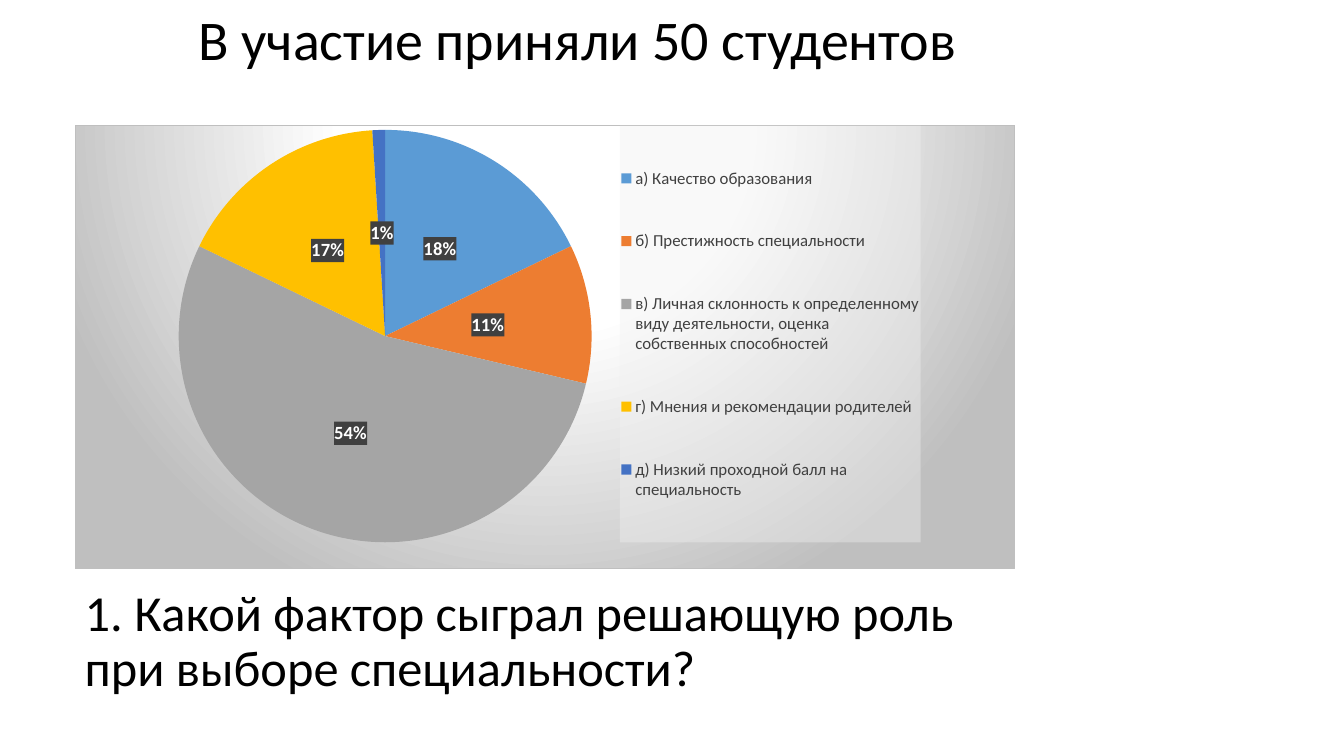
from lxml import etree
from pptx import Presentation
from pptx.chart.data import CategoryChartData
from pptx.dml.color import RGBColor
from pptx.enum.chart import XL_CHART_TYPE, XL_LABEL_POSITION, XL_LEGEND_POSITION
from pptx.enum.text import MSO_ANCHOR, MSO_AUTO_SIZE, PP_ALIGN
from pptx.oxml.ns import nsdecls, qn
from pptx.util import Pt

PIE = XL_CHART_TYPE.PIE
MID = XL_LABEL_POSITION.CENTER
RIGHT = XL_LEGEND_POSITION.RIGHT
GROW = MSO_AUTO_SIZE.SHAPE_TO_FIT_TEXT

FONT = "Calibri"
HEAD = "В участие приняли 50 студентов "
ASK = "1. Какой фактор сыграл решающую роль при выборе специальности?"
FACTORS = [
    ("а) Качество образования", 18, "5B9BD5"),
    ("б) Престижность специальности", 11, "ED7D31"),
    ("в) Личная склонность к определенному виду деятельности, "
     "оценка собственных способностей", 54, "A5A5A5"),
    ("г) Мнения и рекомендации родителей", 17, "FFC000"),
    ("д) Низкий проходной балл на специальность", 1, "4472C4"),
]
LEFT, WIDE = 53.3, 671.8
ASK_BOX = (LEFT, 399.6, WIDE, 118.8)
PIE_BOX = (LEFT, 89.3, WIDE, 317.5)
HEAD_BOX = (39.6, 0, 754.6, 55.4)
STOPS = [(0, "FFFFFF"), (39, "FFFFFF"), (100, "BFBFBF")]


def color(font, tint):
    font.color.rgb = RGBColor.from_string(tint)


def style(font, size, tint, bold=False):
    font.name = FONT
    font.size = Pt(size)
    font.bold = bold
    color(font, tint)


def write(shape, text, size, align):
    frame = shape.text_frame
    frame.text = text
    frame.word_wrap = True
    para = frame.paragraphs[0]
    para.alignment = align
    style(para.runs[0].font, size, "000000")
    return frame, para


def props(inner):
    return etree.fromstring(f"<c:spPr {nsdecls('c', 'a')}>{inner}</c:spPr>")


def wash(tint, alpha):
    return props(f'<a:solidFill><a:srgbClr val="{tint}">'
                 f'<a:alpha val="{alpha * 1000}"/></a:srgbClr></a:solidFill>')


def layout(x, y, w, h, inner=False):
    area = '<c:layoutTarget val="inner"/>' if inner else ""
    modes = "".join(f'<c:{a}Mode val="edge"/>' for a in "xy")
    sizes = "".join(f'<c:{k} val="{v}"/>' for k, v in zip("xywh", (x, y, w, h)))
    return etree.fromstring(f"<c:layout {nsdecls('c')}><c:manualLayout>{area}{modes}"
                            f"{sizes}</c:manualLayout></c:layout>")


def place(parent, spot, node):
    old = parent.find(qn("c:layout"))
    if old is not None:
        parent.remove(old)
    parent.insert(spot, node)


def draw(slide):
    data = CategoryChartData()
    data.categories = [name for name, _, _ in FACTORS]
    data.add_series("Series 1", [share for _, share, _ in FACTORS])
    box = [Pt(n) for n in PIE_BOX]
    chart = slide.shapes.add_chart(PIE, *box, data).chart
    chart.has_title = False
    style(chart.font, 10, "000000")
    chart.has_legend = True
    chart.legend.position = RIGHT
    chart.legend.include_in_layout = False
    style(chart.legend.font, 12, "404040")

    plot = chart.plots[0]
    plot.vary_by_categories = True
    series = plot.series[0]
    for i, (_, _, tint) in enumerate(FACTORS):
        fill = series.points[i].format.fill
        fill.solid()
        fill.fore_color.rgb = RGBColor.from_string(tint)

    labels = series.data_labels
    labels.show_value = True
    labels.show_percentage = False
    labels.number_format = '0"%"'
    labels.number_format_is_linked = False
    labels.position = MID
    style(labels.font, 13.3, "FFFFFF", True)

    root = chart.element
    root.find(".//" + qn("c:dLbls")).find(qn("c:numFmt")).addnext(wash("404040", 90))
    place(root.find(".//" + qn("c:plotArea")), 0, layout(0.11, 0.01, 0.44, 0.93, True))
    key = root.find(".//" + qn("c:legend"))
    place(key, 1, layout(0.58, 0, 0.32, 0.94))
    key.find(qn("c:overlay")).addnext(wash("F2F2F2", 39))
    stops = "".join(f'<a:gs pos="{at * 1000}"><a:srgbClr val="{tint}"/></a:gs>'
                    for at, tint in STOPS)
    root.find(qn("c:chart")).addnext(props(
        f'<a:gradFill><a:gsLst>{stops}</a:gsLst><a:path path="circle">'
        '<a:fillToRect l="50000" t="-80000" r="50000" b="180000"/></a:path></a:gradFill>'
        '<a:ln w="9525"><a:solidFill><a:srgbClr val="BFBFBF"/></a:solidFill></a:ln>'))


def main():
    deck = Presentation()
    deck.slide_width, deck.slide_height = Pt(960), Pt(540)
    slide = deck.slides.add_slide(deck.slide_layouts[5])
    title = slide.shapes.title
    title.left, title.top, title.width, title.height = [Pt(n) for n in ASK_BOX]
    frame, para = write(title, ASK, 36, PP_ALIGN.LEFT)
    frame.vertical_anchor = MSO_ANCHOR.MIDDLE
    para.line_spacing = 0.9
    draw(slide)
    head = slide.shapes.add_textbox(*[Pt(n) for n in HEAD_BOX])
    frame, _ = write(head, HEAD, 40, PP_ALIGN.CENTER)
    frame.auto_size = GROW
    deck.save("out.pptx")


if __name__ == "__main__":
    main()
